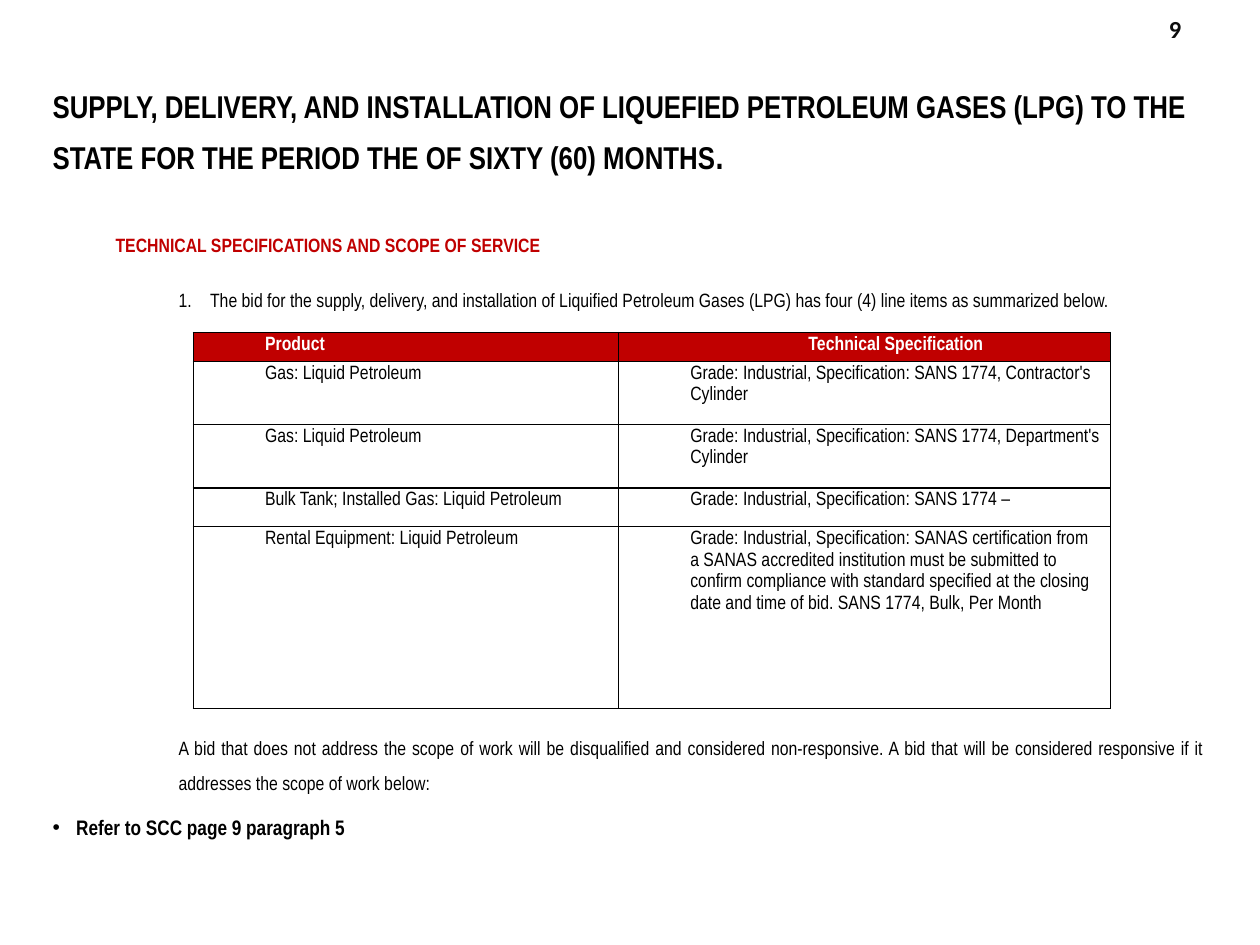
from lxml import etree
from pptx import Presentation
from pptx.dml.color import RGBColor
from pptx.enum.text import MSO_ANCHOR as Anchor, PP_ALIGN as Align
from pptx.oxml.ns import qn
from pptx.util import Pt

BLACK, RED, WHITE = "000000", "C00000", "FFFFFF"

ROWS = [
    ("Product", "Technical Specification"),
    ("Gas: Liquid Petroleum",
     "Grade: Industrial, Specification: SANS 1774, Contractor's Cylinder"),
    ("Gas: Liquid Petroleum",
     "Grade: Industrial, Specification: SANS 1774, Department's Cylinder"),
    ("Bulk Tank; Installed Gas: Liquid Petroleum",
     "Grade: Industrial, Specification: SANS 1774 –"),
    ("Rental Equipment: Liquid Petroleum",
     "Grade: Industrial, Specification: SANAS certification from a SANAS "
     "accredited institution must be submitted to confirm compliance with "
     "standard specified at the closing date and time of bid. SANS 1774, "
     "Bulk, Per Month"),
]
COL_WIDTHS = (243, 281)
ROW_HEIGHTS = (16.5, 36, 36.5, 22, 104)


def color(hex_string):
    return RGBColor.from_string(hex_string)


def add_run(p, text, size=11, font="Arial Narrow", fill=BLACK, bold=False):
    r = p.add_run()
    r.text = text
    r.font.size, r.font.name, r.font.bold = Pt(size), font, bold
    r.font.color.rgb = color(fill)


def add_text(tf, text, align=Align.LEFT, indent=0, hang=0, bullet=None,
             spacing=1.5, before=0, after=0, **fmt):
    """Write one paragraph, reusing the empty first one of the frame."""
    first = tf.paragraphs[0]
    p = tf.add_paragraph() if first.runs else first
    pPr = p._p.get_or_add_pPr()
    pPr.set("marL", str(Pt(indent)))
    pPr.set("indent", str(Pt(-hang)))
    if bullet == "number":
        etree.SubElement(pPr, qn("a:buAutoNum"), type="arabicPeriod")
    elif bullet:
        etree.SubElement(pPr, qn("a:buFont"), typeface="Arial")
        etree.SubElement(pPr, qn("a:buChar"), char=bullet)
    p.alignment, p.line_spacing = align, spacing
    p.space_before, p.space_after = Pt(before), Pt(after)
    add_run(p, text, **fmt)
    return p


def add_box(s, left, top, width, height, anchor=Anchor.TOP):
    tf = s.shapes.add_textbox(Pt(left), Pt(top), Pt(width), Pt(height)).text_frame
    tf.word_wrap = True
    tf.vertical_anchor = anchor
    return tf


def set_borders(cell):
    tcPr = cell._tc.get_or_add_tcPr()
    for side in ("lnL", "lnR", "lnT", "lnB"):
        ln = etree.SubElement(tcPr, qn(f"a:{side}"), w=str(Pt(1)))
        fill = etree.SubElement(ln, qn("a:solidFill"))
        etree.SubElement(fill, qn("a:srgbClr"), val=BLACK)


def add_spec_table(s, left, top):
    table = s.shapes.add_table(len(ROWS), len(COL_WIDTHS), Pt(left), Pt(top),
                               Pt(sum(COL_WIDTHS)), Pt(sum(ROW_HEIGHTS))).table
    table.first_row = table.horz_banding = False
    for col, width in zip(table.columns, COL_WIDTHS):
        col.width = Pt(width)
    for i, (row, height, texts) in enumerate(zip(table.rows, ROW_HEIGHTS, ROWS)):
        row.height = Pt(height)
        header = i == 0
        for j, (cell, text) in enumerate(zip(row.cells, texts)):
            set_borders(cell)
            cell.margin_left = cell.margin_right = Pt(5)
            cell.margin_top = cell.margin_bottom = 0
            if header:
                cell.fill.solid()
                cell.fill.fore_color.rgb = color(RED)
            else:
                cell.fill.background()
            align = Align.JUSTIFY if j == 0 else Align.CENTER if header else Align.LEFT
            add_text(cell.text_frame, text, align=align, indent=36, spacing=1.2,
                     fill=WHITE if header else BLACK, bold=header)


def main():
    prs = Presentation()
    prs.slide_width, prs.slide_height = Pt(720), Pt(540)
    s = prs.slides.add_slide(prs.slide_layouts[6])

    # Page number
    tf = add_box(s, 655, 0, 32, 32.5, Anchor.MIDDLE)
    tf.margin_right = Pt(12)
    add_text(tf, "9", align=Align.RIGHT, spacing=1, size=14, font="Calibri",
             fill="0D0D0D", bold=True)

    # Title
    tf = add_box(s, 23, 37.5, 672.5, 74)
    p = add_text(tf, "SUPPLY, DELIVERY, AND INSTALLATION OF LIQUEFIED PETROLEUM "
                 "GASES (LPG) TO THE STATE FOR THE PERIOD THE OF SIXTY (60) MONTHS",
                 spacing=Pt(30), size=18, bold=True)
    add_run(p, ".", size=20, bold=True)

    # Heading and introduction
    tf = add_box(s, 23, 123, 672.5, 65)
    add_text(tf, "TECHNICAL SPECIFICATIONS AND SCOPE OF SERVICE",
             align=Align.JUSTIFY, indent=36, after=6, fill=RED, bold=True)
    add_text(tf, "The bid for the supply, delivery, and installation of Liquified "
             "Petroleum Gases (LPG) has four (4) line items as summarized below.",
             align=Align.JUSTIFY, indent=90, hang=18, bullet="number",
             before=6, after=6)

    # Line items
    add_spec_table(s, 110.5, 190)

    # Closing condition and reference
    tf = add_box(s, 23, 410.5, 672.5, 113)
    add_text(tf, "A bid that does not address the scope of work will be disqualified "
             "and considered non-responsive. A bid that will be considered responsive "
             "if it addresses the scope of work below:",
             align=Align.JUSTIFY, indent=72, after=6)
    add_text(tf, "Refer to SCC page 9 paragraph 5", indent=13.5, hang=13.5,
             bullet="•", spacing=0.9, before=7.5, size=12, bold=True)

    prs.save("out.pptx")


if __name__ == "__main__":
    main()
